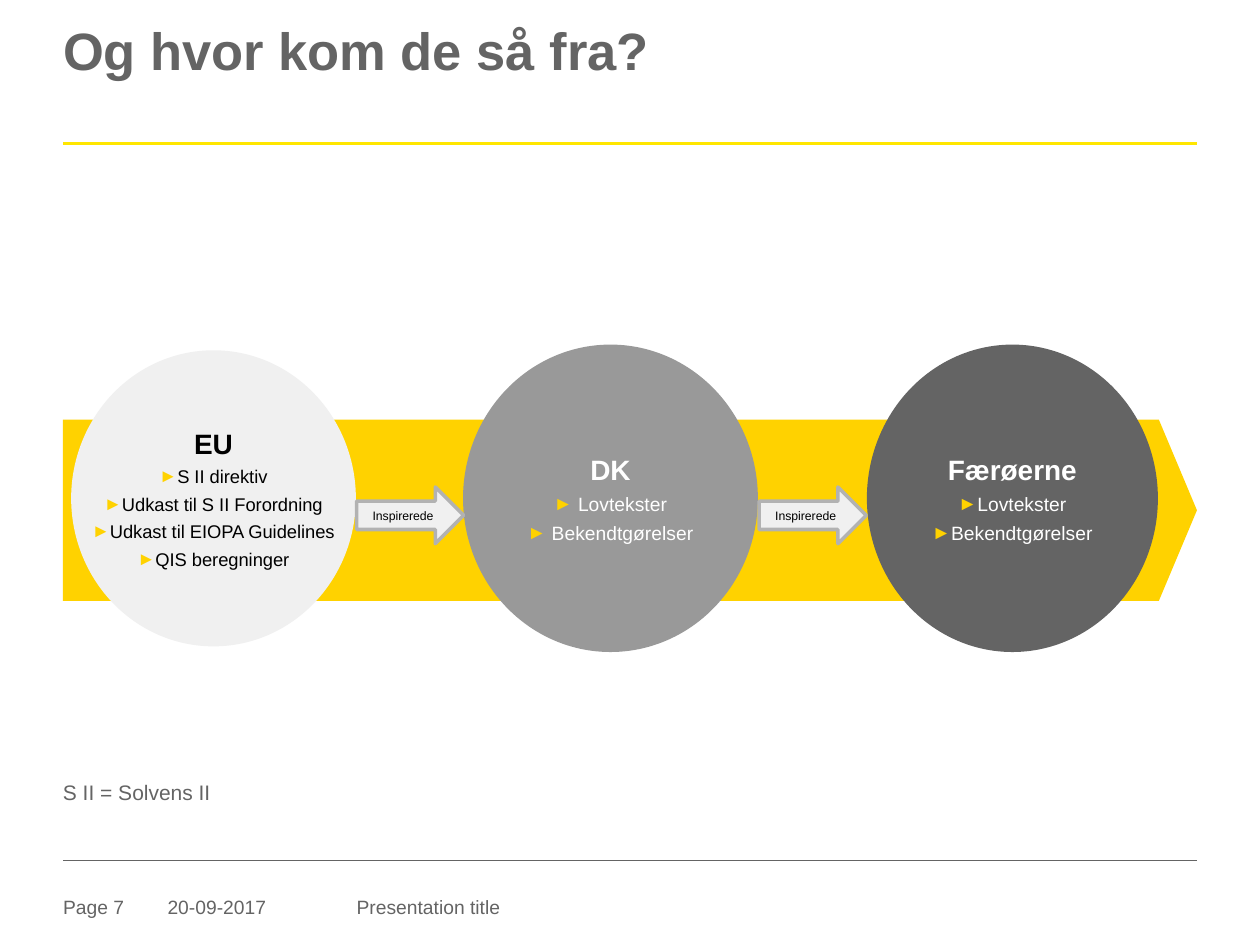
from lxml.etree import SubElement
from pptx import Presentation
from pptx.dml.color import RGBColor
from pptx.enum.shapes import MSO_CONNECTOR, MSO_SHAPE
from pptx.enum.text import MSO_ANCHOR, MSO_AUTO_SIZE, PP_ALIGN
from pptx.oxml.ns import qn
from pptx.util import Inches, Pt

COLORS = {
    "text": "646464",
    "rule": "FFE600",
    "band": "FFD200",
    "light": "F0F0F0",
    "middle": "999999",
    "outline": "B2B2B2",
    "black": "000000",
    "white": "FFFFFF",
}
FONT = "Arial"
COLUMNS, ROWS = 20, 15
CELL = Inches(0.5)
LEFT, RIGHT = 1, COLUMNS - 1
CIRCLE_MIDDLE = 7.91
FOOTER_ROW = 14.21


def cells(*counts):
    return [round(count * CELL) for count in counts]


def color(name):
    return RGBColor.from_string(COLORS[name])


def add_bullet(paragraph):
    properties = paragraph._p.get_or_add_pPr()
    properties.set("marL", str(Inches(0.11)))
    properties.set("indent", str(-Inches(0.11)))
    bullet_color = SubElement(properties, qn("a:buClr"))
    SubElement(bullet_color, qn("a:srgbClr"), val=COLORS["band"])
    SubElement(properties, qn("a:buSzPct"), val="100000")
    SubElement(properties, qn("a:buFont"), typeface=FONT)
    SubElement(properties, qn("a:buChar"), char="►")


def write(paragraph, text, size=11, ink="text", bold=False, align=PP_ALIGN.LEFT,
          bullet=False, before=None, spacing=None):
    if bullet:
        add_bullet(paragraph)
    paragraph.alignment = align
    if before is not None:
        paragraph.space_before = Pt(before)
    if spacing is not None:
        paragraph.line_spacing = spacing
    run = paragraph.add_run()
    run.text = text
    run.font.name = FONT
    run.font.size = Pt(size)
    run.font.bold = bold
    run.font.color.rgb = color(ink)


def set_frame(shape, inset=0, anchor=MSO_ANCHOR.TOP, wrap=True):
    frame = shape.text_frame
    frame.margin_left = frame.margin_right = Inches(inset)
    frame.margin_top = frame.margin_bottom = Inches(inset)
    frame.vertical_anchor = anchor
    frame.word_wrap = wrap
    frame.auto_size = MSO_AUTO_SIZE.NONE
    return frame


def add_title(slide, text):
    title = slide.shapes.title
    title.left, title.top, title.width, title.height = cells(LEFT, 0.44, RIGHT - LEFT, 1.88)
    write(set_frame(title).paragraphs[0], text, size=30, bold=True, spacing=0.85)


def add_label(slide, text, left, top, width, **text_format):
    box = slide.shapes.add_textbox(*cells(left, top, width, 0.44))
    write(set_frame(box).paragraphs[0], text, **text_format)


def add_rule(slide, row, ink, weight):
    x1, y1, x2, y2 = cells(LEFT, row, RIGHT, row)
    rule = slide.shapes.add_connector(MSO_CONNECTOR.STRAIGHT, x1, y1, x2, y2)
    rule.line.color.rgb = color(ink)
    rule.line.width = Pt(weight)
    SubElement(rule._element.spPr, qn("a:effectLst"))


def add_figure(slide, kind, left, top, width, height, fill, outline=None):
    shape = slide.shapes.add_shape(kind, *cells(left, top, width, height))
    shape.shadow.inherit = False
    shape.fill.solid()
    shape.fill.fore_color.rgb = color(fill)
    if outline:
        shape.line.color.rgb = color(outline)
        shape.line.width = Pt(2)
    else:
        shape.line.fill.background()
    return shape


def add_circle(slide, left, width, height, fill, ink, heading, items, size=11, before=3.5):
    top = CIRCLE_MIDDLE - height / 2
    circle = add_figure(slide, MSO_SHAPE.OVAL, left, top, width, height, fill)
    frame = set_frame(circle, inset=0.05, anchor=MSO_ANCHOR.MIDDLE, wrap=False)
    write(frame.paragraphs[0], heading, size=16, ink=ink, bold=True, align=PP_ALIGN.CENTER)
    for item in items:
        write(frame.add_paragraph(), item, size=size, ink=ink, align=PP_ALIGN.CENTER,
              bullet=True, before=before)


def add_arrow(slide, left, text):
    arrow = add_figure(slide, MSO_SHAPE.RIGHT_ARROW, left, 7.73, 1.7, 0.9, "light", "outline")
    frame = set_frame(arrow, anchor=MSO_ANCHOR.MIDDLE, wrap=False)
    write(frame.paragraphs[0], text, size=7, ink="black", align=PP_ALIGN.CENTER)


def main():
    presentation = Presentation()
    presentation.slide_width, presentation.slide_height = cells(COLUMNS, ROWS)
    slide = presentation.slides.add_slide(presentation.slide_layouts[5])

    add_title(slide, "Og hvor kom de så fra?")
    add_rule(slide, 2.28, "rule", 1.5)
    add_rule(slide, 13.66, "text", 0.25)

    band = add_figure(slide, MSO_SHAPE.PENTAGON, LEFT, 6.66, RIGHT - LEFT, 2.88, "band")
    band.adjustments[0] = 0.21
    add_circle(slide, 1.13, 4.52, 4.7, "light", "black", "EU",
               ["S II direktiv", "Udkast til S II Forordning",
                "Udkast til EIOPA Guidelines", "QIS beregninger"], size=10.5, before=3.15)
    add_circle(slide, 13.76, 4.62, 4.88, "text", "white", "Færøerne",
               ["Lovtekster", "Bekendtgørelser"])
    add_circle(slide, 7.35, 4.68, 4.88, "middle", "white", "DK",
               [" Lovtekster", " Bekendtgørelser"])
    for left in (5.66, 12.05):
        add_arrow(slide, left, "Inspirerede")

    add_label(slide, "S II = Solvens II", LEFT, 12.38, RIGHT - LEFT, size=12)
    for text, left, width in (("Page 7", LEFT, 1.58), ("20-09-2017", 2.66, 2.6),
                              ("Presentation title", 5.66, 7.52)):
        add_label(slide, text, left, FOOTER_ROW, width)

    presentation.save("out.pptx")


if __name__ == "__main__":
    main()
